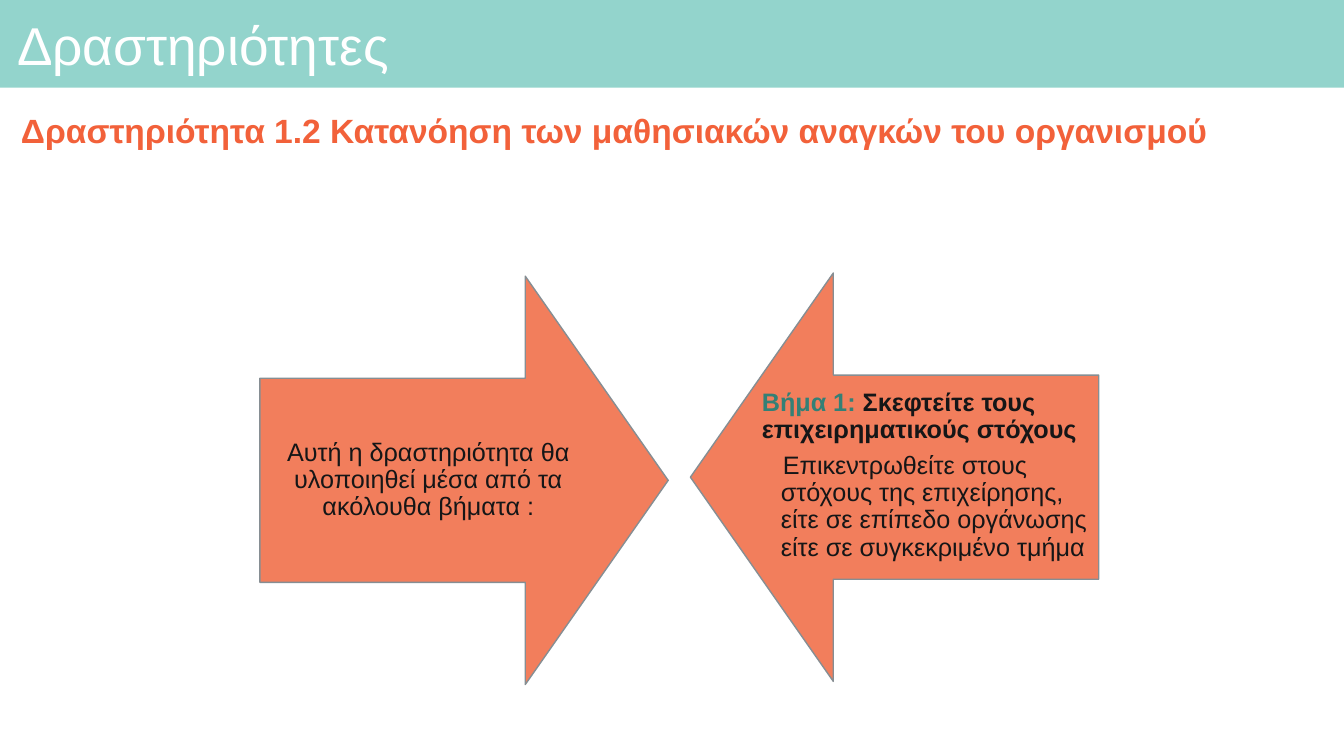
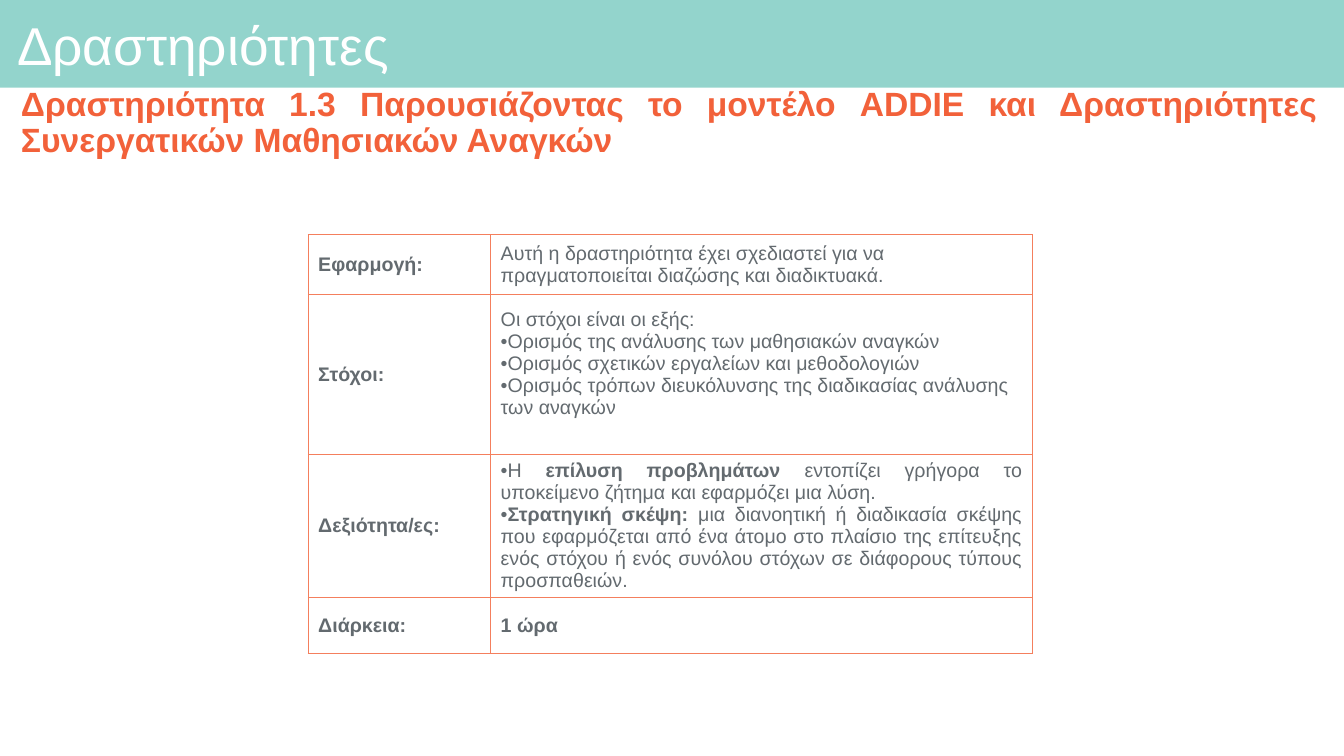
import pptx
import pptx.dml.color
import pptx.enum.shapes
import pptx.enum.text
import pptx.oxml
import pptx.oxml.ns
import pptx.util

Cm = pptx.util.Cm
Pt = pptx.util.Pt
RGBColor = pptx.dml.color.RGBColor
SHAPE = pptx.enum.shapes.MSO_SHAPE
ALIGN = pptx.enum.text.PP_ALIGN
ANCHOR = pptx.enum.text.MSO_ANCHOR

WHITE = RGBColor(0xFF, 0xFF, 0xFF)
MINT = RGBColor(0x93, 0xD4, 0xCC)
TEAL = RGBColor(0x33, 0x80, 0x76)
ORANGE = RGBColor(0xF2, 0x61, 0x3A)
CORAL = RGBColor(0xF2, 0x7E, 0x5C)
BORDER = RGBColor(0xF4, 0x7F, 0x5D)
OUTLINE = RGBColor(0x86, 0x8E, 0x93)
INK = RGBColor(0x15, 0x16, 0x17)
GREY = RGBColor(0x63, 0x6A, 0x6F)
FONT = "Arial"
SLIDE_W, SLIDE_H = Cm(33.87), Cm(19.05)


def apply(target, values):
    for name, value in values.items():
        setattr(target, name, value)


def para(*runs, bullet=False, indent=None, **fmt):
    return {"runs": runs, "bullet": bullet, "indent": indent, "fmt": fmt}


class Deck:
    """Holds the shared style and the current slide."""

    def __init__(self):
        self.prs = pptx.Presentation()
        apply(self.prs, {"slide_width": SLIDE_W, "slide_height": SLIDE_H})
        self.layout = self.prs.slide_layouts[5]
        self.s = None
        self.has_band = False

    def slide(self, title):
        self.s = self.prs.slides.add_slide(self.layout)
        if not self.has_band:
            self.band()
        sp = self.s.shapes.title
        apply(sp, {"left": Cm(0.28), "top": Cm(0.23), "width": Cm(33.17), "height": Cm(1.98)})
        self.frame(sp.text_frame, ANCHOR.MIDDLE, [Cm(0.15)] * 4)
        self.text(sp.text_frame, [para((title, False), line_spacing=0.9)], 38, WHITE)

    def band(self):
        sp = self.s.shapes.add_shape(SHAPE.RECTANGLE, 0, 0, SLIDE_W, Cm(2.21))
        sp.shadow.inherit = False
        sp.fill.solid()
        sp.fill.fore_color.rgb = MINT
        sp.line.fill.background()
        self.layout.placeholders[0].element.getparent().insert(2, sp.element)
        self.has_band = True

    def frame(self, tf, anchor, margins):
        left, top, right, bottom = margins
        apply(tf, {"word_wrap": True, "vertical_anchor": anchor,
                   "auto_size": pptx.enum.text.MSO_AUTO_SIZE.NONE,
                   "margin_left": left, "margin_top": top,
                   "margin_right": right, "margin_bottom": bottom})

    def text(self, tf, paras, size, color):
        for i, item in enumerate(paras):
            p = tf.add_paragraph() if i else tf.paragraphs[0]
            apply(p, {"alignment": ALIGN.LEFT, **item["fmt"]})
            pPr = p._p.get_or_add_pPr()
            if item["indent"]:
                margin, first = item["indent"]
                pPr.set("marL", str(margin))
                pPr.set("indent", str(first))
            if item["bullet"]:
                ns = pptx.oxml.ns.nsdecls("a")
                for xml in (f'<a:buFont {ns} typeface="{FONT}"/>', f'<a:buChar {ns} char="•"/>'):
                    pPr.append(pptx.oxml.parse_xml(xml))
            for words, bold, *own in item["runs"]:
                r = p.add_run()
                r.text = words
                apply(r.font, {"name": FONT, "size": Pt(size), "bold": bold})
                r.font.color.rgb = own[0] if own else color

    def heading(self, words, top):
        tf = self.s.shapes.add_textbox(Cm(0.28), top, Cm(33.17), Cm(1.52)).text_frame
        self.frame(tf, ANCHOR.MIDDLE, [Cm(0.25), Cm(0.13)] * 2)
        self.text(tf, [para((words, True), alignment=ALIGN.JUSTIFY, line_spacing=0.9)], 24, ORANGE)

    def arrow(self, kind, left, top, paras, anchor, margins):
        sp = self.s.shapes.add_shape(kind, left, top, Cm(10.29), Cm(10.29))
        sp.shadow.inherit = False
        sp.adjustments[0], sp.adjustments[1] = 0.5, 0.35
        sp.fill.solid()
        sp.fill.fore_color.rgb = CORAL
        sp.line.color.rgb = OUTLINE
        sp.line.width = Pt(1)
        self.frame(sp.text_frame, anchor, margins)
        self.text(sp.text_frame, paras, 18, INK)

    def table(self, left, top, widths, rows):
        height = sum(row[0] for row in rows)
        table = self.s.shapes.add_table(len(rows), len(widths), left, top, sum(widths), height).table
        apply(table, {"first_row": False, "horz_banding": False})
        for column, width in zip(table.columns, widths):
            column.width = width
        for i, (row_height, label, paras, bottom) in enumerate(rows):
            table.rows[i].height = row_height
            self.cell(table.cell(i, 0), [para((label, True))], Cm(0.13))
            self.cell(table.cell(i, 1), paras, bottom)

    def cell(self, cell, paras, bottom):
        apply(cell, {"vertical_anchor": ANCHOR.MIDDLE, "margin_left": Cm(0.25),
                     "margin_right": Cm(0.25), "margin_top": Cm(0.13), "margin_bottom": bottom})
        tcPr = cell._tc.get_or_add_tcPr()
        for side in "LRTB":
            tcPr.append(pptx.oxml.parse_xml(
                f'<a:ln{side} {pptx.oxml.ns.nsdecls("a")} w="{Pt(0.75)}"><a:solidFill>'
                f'<a:srgbClr val="{BORDER}"/></a:solidFill></a:ln{side}>'))
        cell.fill.background()
        self.text(cell.text_frame, paras, 14, GREY)


def steps_slide(deck):
    deck.slide("Δραστηριότητες")
    deck.heading("Δραστηριότητα 1.2 Κατανόηση των μαθησιακών αναγκών του οργανισμού", Cm(2.59))
    intro = para(("Αυτή η δραστηριότητα θα υλοποιηθεί μέσα από τα ακόλουθα βήματα :", False),
                 alignment=ALIGN.CENTER, line_spacing=0.9)
    deck.arrow(SHAPE.RIGHT_ARROW, Cm(6.55), Cm(6.96), [intro], ANCHOR.MIDDLE, [Cm(0.36)] * 4)
    step = [
        para(("Βήμα 1: ", True, TEAL), ("Σκεφτείτε τους επιχειρηματικούς στόχους", True),
             line_spacing=0.9),
        para(("Επικεντρωθείτε στους στόχους της επιχείρησης, είτε σε επίπεδο οργάνωσης "
              "είτε σε συγκεκριμένο τμήμα", False),
             indent=(Cm(0.48), Cm(0.05)), line_spacing=0.9, space_before=Pt(6.3)),
    ]
    deck.arrow(SHAPE.LEFT_ARROW, Cm(17.4), Cm(6.88), step, ANCHOR.TOP, [0, Cm(0.36)] * 2)


def addie_slide(deck):
    deck.slide("Δραστηριότητες")
    deck.heading("Δραστηριότητα 1.3 Παρουσιάζοντας το μοντέλο ADDIE και Δραστηριότητες "
                 "Συνεργατικών Μαθησιακών Αναγκών", Cm(2.36))
    bullet = {"bullet": True, "indent": (0, 0)}
    goals = [para(("Οι στόχοι είναι οι εξής:", False))] + [
        para((goal, False), **bullet) for goal in (
            "Ορισμός της ανάλυσης των μαθησιακών αναγκών",
            "Ορισμός σχετικών εργαλείων και μεθοδολογιών",
            "Ορισμός τρόπων διευκόλυνσης της διαδικασίας ανάλυσης των αναγκών")]
    skills = [para(*runs, alignment=ALIGN.JUSTIFY, **bullet) for runs in (
        (("Η ", False), ("επίλυση προβλημάτων ", True),
         ("εντοπίζει γρήγορα το υποκείμενο ζήτημα και εφαρμόζει μια λύση.", False)),
        (("Στρατηγική σκέψη: ", True),
         ("μια διανοητική ή διαδικασία σκέψης που εφαρμόζεται από ένα άτομο στο πλαίσιο της "
          "επίτευξης ενός στόχου ή ενός συνόλου στόχων σε διάφορους τύπους προσπαθειών.", False)))]
    usage = [para(("Αυτή η δραστηριότητα έχει σχεδιαστεί για να πραγματοποιείται διαζώσης "
                   "και διαδικτυακά.", False))]
    deck.table(Cm(7.77), Cm(5.92), [Cm(4.6), Cm(13.64)], [
        (Cm(1.51), "Εφαρμογή:", usage, Cm(0.13)),
        (Cm(4.01), "Στόχοι:", goals, Cm(0.68)),
        (Cm(3.61), "Δεξιότητα/ες:", skills, Cm(0.13)),
        (Cm(1.42), "Διάρκεια:", [para(("1 ώρα", True))], Cm(0.13)),
    ])


def main():
    deck = Deck()
    steps_slide(deck)
    addie_slide(deck)
    deck.prs.save("out.pptx")


if __name__ == "__main__":
    main()
